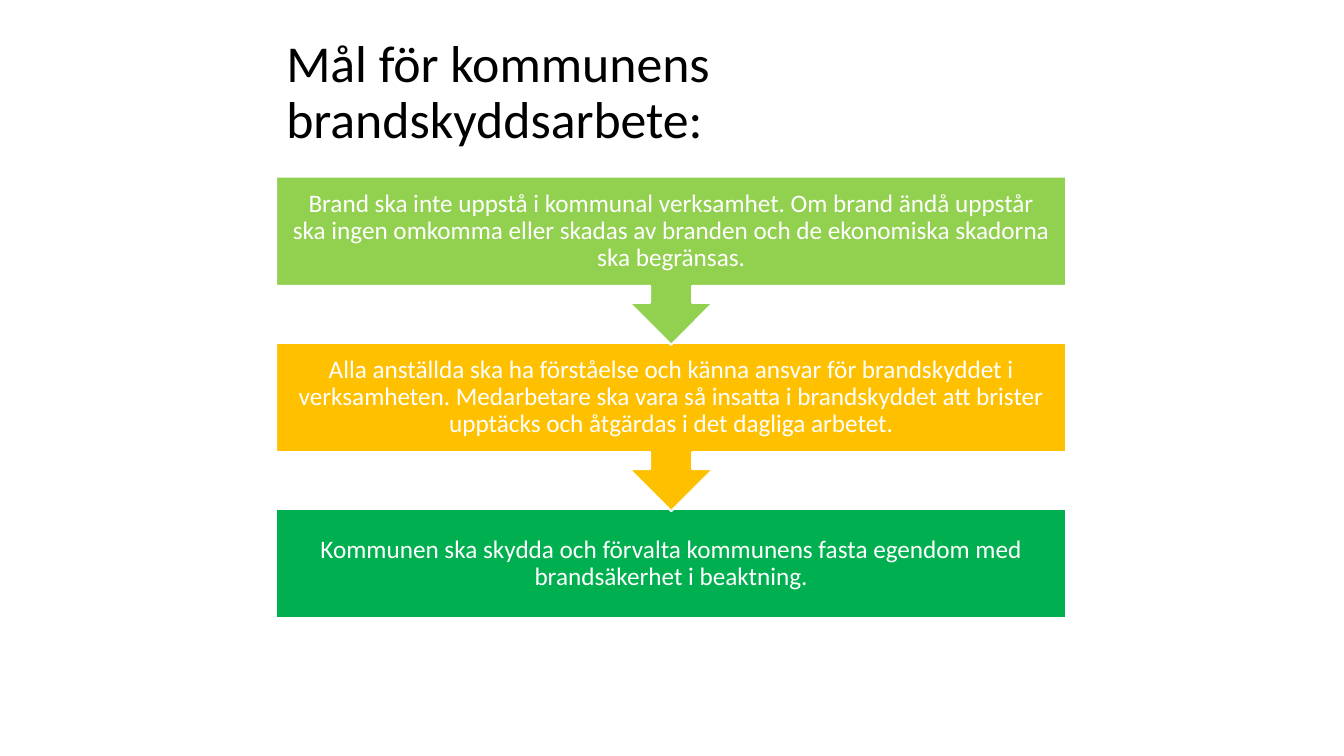
from pptx import Presentation
from pptx.dml.color import RGBColor
from pptx.enum.shapes import MSO_SHAPE as Shape
from pptx.enum.text import MSO_ANCHOR as Anchor, MSO_AUTO_SIZE as AutoSize, PP_ALIGN as Align
from pptx.util import Cm, Pt

COLORS = {
    "black": "000000",
    "white": "FFFFFF",
    "lime": "92D050",
    "amber": "FFC000",
    "green": "00B050",
}
LEFT, WIDTH = 6.96, 19.91
GOALS_TOP, GOAL_STEP = 4.45, 4.19
BOX_HEIGHT, CALLOUT_HEIGHT = 2.74, 4.24

TITLE = "Mål för kommunens brandskyddsarbete:"
GOALS = [
    ("Brand ska inte uppstå i kommunal verksamhet. Om brand ändå uppstår ska ingen "
     "omkomma eller skadas av branden och de ekonomiska skadorna ska begränsas.", "lime"),
    ("Alla anställda ska ha förståelse och känna ansvar för brandskyddet i verksamheten. "
     "Medarbetare ska vara så insatta i brandskyddet att brister upptäcks och åtgärdas "
     "i det dagliga arbetet.", "amber"),
    ("Kommunen ska skydda och förvalta kommunens fasta egendom med brandsäkerhet "
     "i beaktning.", "green"),
]


def rgb(name):
    return RGBColor.from_string(COLORS[name])


def set_attributes(target, values):
    for name, value in values.items():
        setattr(target, name, value)


def write_text(sp, text, size, color, align, **frame_format):
    tf = sp.text_frame
    tf.text = text
    set_attributes(tf, {"word_wrap": True, "auto_size": AutoSize.NONE,
                        "vertical_anchor": Anchor.MIDDLE, **frame_format})
    p = tf.paragraphs[0]
    set_attributes(p, {"alignment": align, "line_spacing": 0.9})
    r = p.runs[0]
    set_attributes(r.font, {"name": "Calibri", "size": Pt(size)})
    r.font.color.rgb = rgb(color)


def add_title(s):
    title = s.shapes.title
    set_attributes(title, {"left": Cm(LEFT), "top": Cm(0.76),
                           "width": Cm(WIDTH), "height": Cm(3.18)})
    write_text(title, TITLE, 37, "black", Align.LEFT)


def add_goal(s, index, text, color):
    """Add one goal box; every goal but the last points down to the next."""
    is_last = index == len(GOALS) - 1
    kind = Shape.RECTANGLE if is_last else Shape.DOWN_ARROW_CALLOUT
    height = BOX_HEIGHT if is_last else CALLOUT_HEIGHT
    sp = s.shapes.add_shape(kind, Cm(LEFT), Cm(GOALS_TOP + index * GOAL_STEP),
                            Cm(WIDTH), Cm(height))
    sp.shadow.inherit = False
    sp.fill.solid()
    sp.fill.fore_color.rgb = rgb(color)
    sp.line.color.rgb = rgb("white")
    sp.line.width = Pt(1.5)
    margins = {f"margin_{side}": Cm(0.36) for side in ("left", "top", "right", "bottom")}
    write_text(sp, text, 18, "white", Align.CENTER, **margins)


def main():
    prs = Presentation()
    set_attributes(prs, {"slide_width": Cm(33.87), "slide_height": Cm(19.05)})
    s = prs.slides.add_slide(prs.slide_layouts.get_by_name("Title Only"))
    add_title(s)
    # Last goal first, so that each arrow tip lies over the box below it
    for index, (text, color) in reversed(list(enumerate(GOALS))):
        add_goal(s, index, text, color)
    prs.save("out.pptx")


if __name__ == "__main__":
    main()
